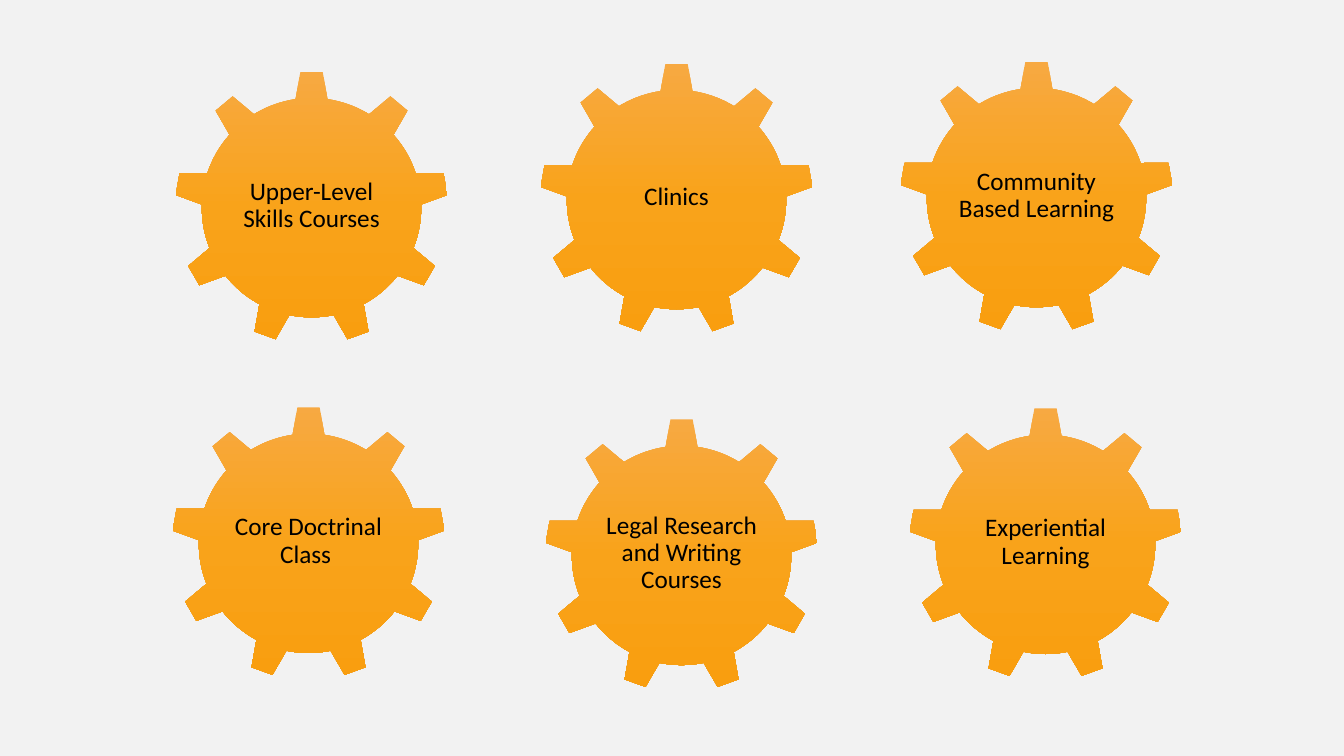
from copy import deepcopy

from pptx import Presentation
from pptx import util as u
from pptx.dml.color import RGBColor
from pptx.enum import shapes, text
from pptx.oxml import ns


def tint(code):
    return RGBColor.from_string(code)


class Board:
    """Holds the style and the current slide."""
    font, size, ink = "Calibri", 18, "000000"
    paper = "F2F2F2"
    shades = ["F7A942", "F9A31A", "F99E0F"]
    gear_size, label_high, inset = 2.72, 1.4, 0.02

    def __init__(self, deck):
        self.slide = deck.slides.add_slide(deck.slide_layouts[6])
        back = self.slide.background.fill
        back.solid()
        back.fore_color.rgb = tint(self.paper)

    def fade(self, shape):
        shape.fill.gradient()
        shape.fill.gradient_angle = 270  # top to bottom
        stops = shape._element.spPr.find(".//" + ns.qn("a:gsLst"))
        stops.insert(1, deepcopy(stops[0]))
        last = len(self.shades) - 1
        for i, stop in enumerate(shape.fill.gradient_stops):
            stop.position = i / last
            stop.color.rgb = tint(self.shades[i])

    def gear(self, group, left, top):
        side = u.Inches(self.gear_size)
        gear = group.shapes.add_shape(
            shapes.MSO_SHAPE.GEAR_9, u.Inches(left), u.Inches(top), side, side)
        gear.shadow.inherit = False
        gear.line.fill.background()
        self.fade(gear)

    def label(self, group, left, top, width, words):
        box = group.shapes.add_textbox(
            u.Inches(left), u.Inches(top),
            u.Inches(width), u.Inches(self.label_high))
        frame = box.text_frame
        frame.text = words
        frame.word_wrap = True
        frame.vertical_anchor = text.MSO_ANCHOR.MIDDLE
        frame.margin_left = frame.margin_right = u.Inches(self.inset)
        frame.margin_top = frame.margin_bottom = u.Inches(self.inset)
        para = frame.paragraphs[0]
        para.alignment = text.PP_ALIGN.CENTER
        para.line_spacing = 0.9
        font = para.runs[0].font
        font.name, font.size = self.font, u.Pt(self.size)
        font.color.rgb = tint(self.ink)

    def wheel(self, words, left, top, width=1.63, drop=0.64):
        """A gear with its label centred across it."""
        group = self.slide.shapes.add_group_shape()
        self.gear(group, left, top)
        edge = left + (self.gear_size - width) / 2
        self.label(group, edge, top + drop, width, words)


# Words, left, top and, where it differs, label width
WHEELS = [
    ("Legal Research and Writing Courses", 5.4, 4.15),
    ("Community Based Learning", 8.92, 0.6, 1.79),
    ("Clinics", 5.35, 0.62),
    ("Core Doctrinal Class ", 1.7, 4.03),
    ("Upper-Level Skills Courses", 1.73, 0.7),
    ("Experiential Learning", 9.01, 4.04),
]


def main():
    deck = Presentation()
    deck.slide_width, deck.slide_height = u.Inches(13.33), u.Inches(7.5)
    board = Board(deck)
    for wheel in WHEELS:
        board.wheel(*wheel)
    deck.save("out.pptx")


if __name__ == "__main__":
    main()
